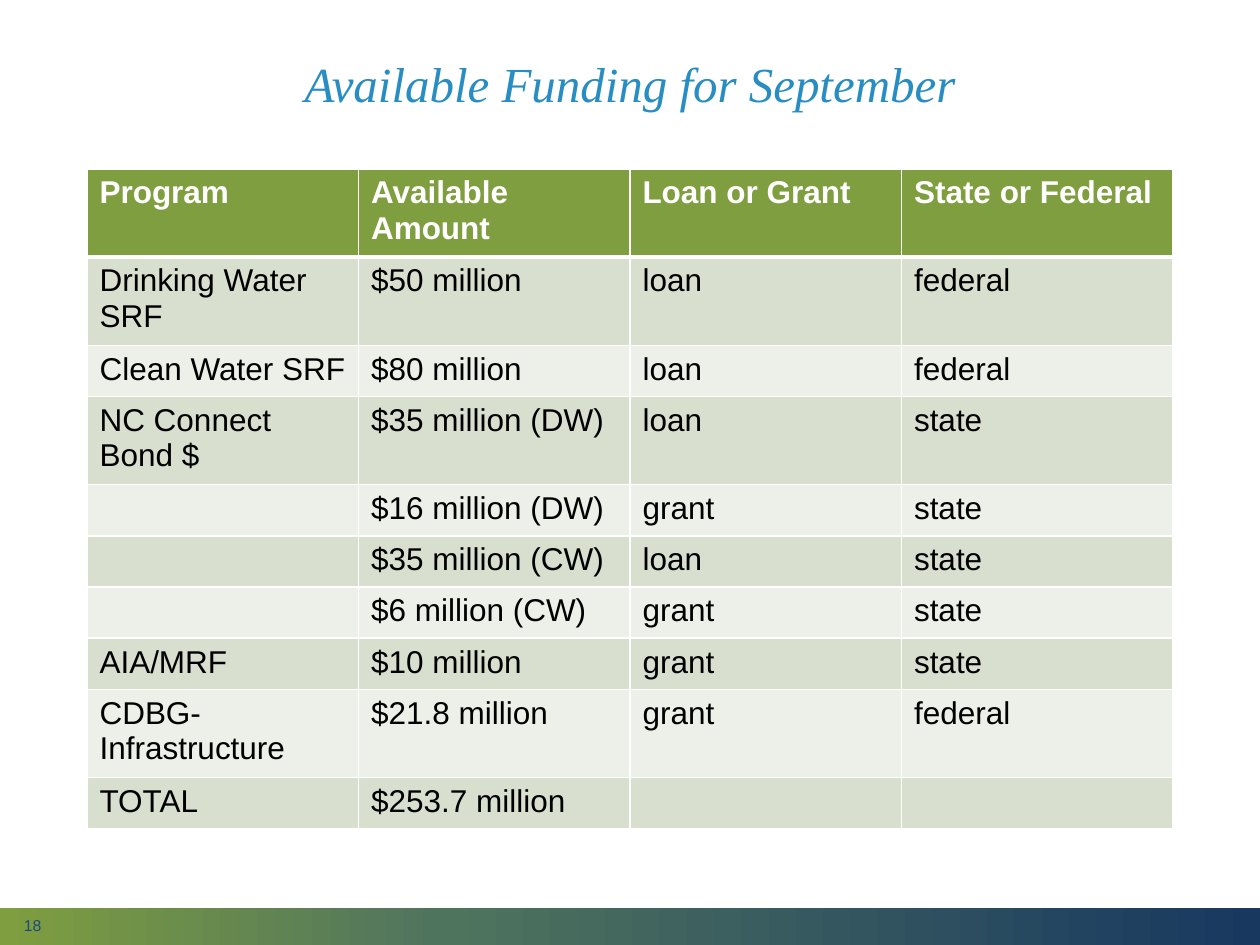
from lxml import etree
from pptx import Presentation
from pptx.dml.color import RGBColor
from pptx.enum.shapes import MSO_SHAPE
from pptx.enum.text import MSO_ANCHOR, PP_ALIGN
from pptx.oxml.ns import qn
from pptx.util import Inches, Pt

RECT = MSO_SHAPE.RECTANGLE
MIDDLE = MSO_ANCHOR.MIDDLE
LEFT, CENTER = PP_ALIGN.LEFT, PP_ALIGN.CENTER

GREEN, WHITE, BLACK = "7F9E3F", "FFFFFF", "000000"
BANDS = ("D8DFCF", "ECF0E8")
FOOTER_STOPS = ((0, GREEN), (35, "4F745E"), (100, "183860"))

TITLE_FONT = {"name": "Times New Roman", "size": Pt(28), "italic": True}
HEADER_FONT = {"name": "Arial", "size": Pt(18), "bold": True}
BODY_FONT = {"name": "Arial", "size": Pt(18), "bold": False}
NUMBER_FONT = {"name": "Arial", "size": Pt(9)}

FUNDING = [
    ("Program", "Available Amount", "Loan or Grant", "State or Federal"),
    ("Drinking Water SRF", "$50 million", "loan", "federal"),
    ("Clean Water SRF", "$80 million", "loan", "federal"),
    ("NC Connect Bond $", "$35 million (DW)", "loan", "state"),
    ("", "$16 million (DW)", "grant", "state"),
    ("", "$35 million (CW)", "loan", "state"),
    ("", "$6 million (CW)", "grant", "state"),
    ("AIA/MRF", "$10 million", "grant", "state"),
    ("CDBG-Infrastructure", "$21.8 million", "grant", "federal"),
    ("TOTAL", "$253.7 million", "", ""),
]


def rgb(color):
    return RGBColor.from_string(color)


def format_font(font, color, values):
    for name, value in values.items():
        setattr(font, name, value)
    font.color.rgb = rgb(color)


def add_text(slide, box, text, color, values, align=LEFT, spacing=1.0):
    tf = slide.shapes.add_textbox(*map(Inches, box)).text_frame
    tf.word_wrap = True
    tf.vertical_anchor = MIDDLE
    p = tf.paragraphs[0]
    p.alignment = align
    p.line_spacing = spacing
    r = p.add_run()
    r.text = text
    format_font(r.font, color, values)


def add_gradient_bar(slide, box, stops):
    sp = slide.shapes.add_shape(RECT, *map(Inches, box))
    sp.shadow.inherit = False
    sp.line.fill.background()
    sp.fill.gradient()
    sp.fill.gradient_angle = 0
    # Replace the two default stops
    gs_list = sp._element.spPr.find(".//" + qn("a:gsLst"))
    for gs in list(gs_list):
        gs_list.remove(gs)
    for percent, color in stops:
        gs = etree.SubElement(gs_list, qn("a:gs"), pos=str(percent * 1000))
        etree.SubElement(gs, qn("a:srgbClr"), val=color)


def set_borders(cell, widths):
    tc_pr = cell._tc.get_or_add_tcPr()
    for side, width in widths.items():
        ln = etree.SubElement(tc_pr, qn("a:ln" + side), w=str(Pt(width)))
        fill = etree.SubElement(ln, qn("a:solidFill"))
        etree.SubElement(fill, qn("a:srgbClr"), val=WHITE)


def add_funding_table(slide, box, rows):
    shape = slide.shapes.add_table(len(rows), len(rows[0]), *map(Inches, box))
    table = shape.table
    for i, row in enumerate(rows):
        header = i == 0
        fill = GREEN if header else BANDS[(i - 1) % 2]
        color, values = (WHITE, HEADER_FONT) if header else (BLACK, BODY_FONT)
        # The rule under the header is thicker than the other borders
        widths = {"L": 1, "R": 1, "T": 3 if i == 1 else 1, "B": 3 if header else 1}
        for j, text in enumerate(row):
            cell = table.cell(i, j)
            set_borders(cell, widths)
            cell.fill.solid()
            cell.fill.fore_color.rgb = rgb(fill)
            if text:
                r = cell.text_frame.paragraphs[0].add_run()
                r.text = text
                format_font(r.font, color, values)


def main():
    prs = Presentation()
    prs.slide_width, prs.slide_height = Inches(10), Inches(7.5)
    slide = prs.slides.add_slide(prs.slide_layouts[6])

    # Footer band
    add_gradient_bar(slide, (0, 7.21, 10, 0.3), FOOTER_STOPS)

    # Title
    add_text(slide, (0.69, 0.11, 8.62, 1.16), "Available Funding for September",
             "288DC2", TITLE_FONT, CENTER, 0.9)

    # Funding by program
    add_funding_table(slide, (0.69, 1.34, 8.62, 4.06), FUNDING)

    # Slide number
    add_text(slide, (0.09, 7.27, 2.25, 0.15), "18", "1F497D", NUMBER_FONT)

    prs.save("out.pptx")


if __name__ == "__main__":
    main()
